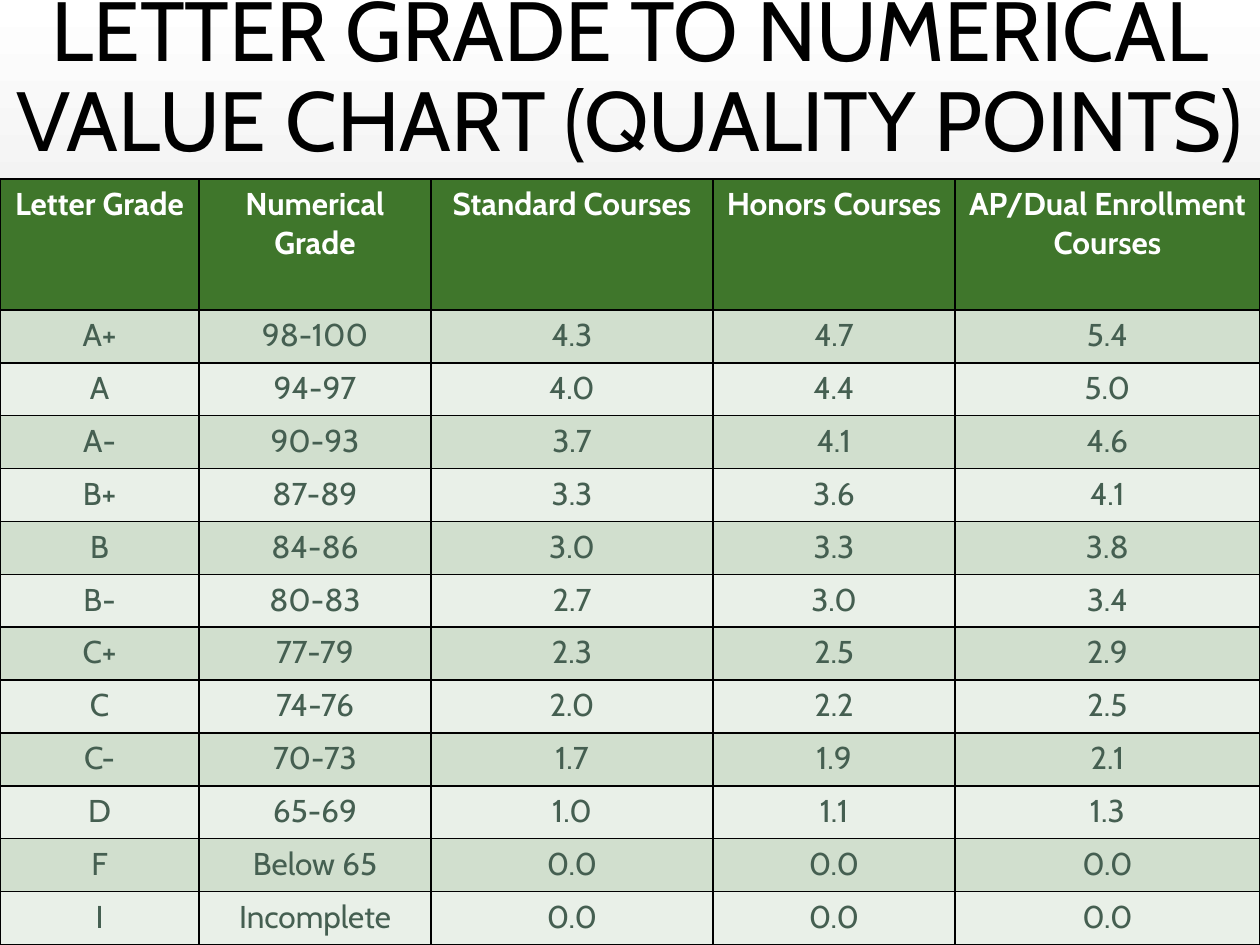
from lxml import etree
from pptx import Presentation
from pptx.dml.color import RGBColor as RGB
from pptx.enum.text import MSO_ANCHOR as ANCHOR, PP_ALIGN as ALIGN
from pptx.oxml.ns import qn
from pptx.util import Inches, Pt

COLORS = {
    "black": "000000",
    "white": "FFFFFF",
    "bg_end": "B9B9B9",
    "header": "3F762B",
    "band_dark": "D1DFCE",
    "band_light": "E9F0E8",
    "body": "455F51",
}
TITLE = "LETTER GRADE TO NUMERICAL VALUE CHART (QUALITY POINTS)"
HEADERS = ["Letter Grade", "Numerical Grade", "Standard Courses",
           "Honors Courses", "AP/Dual Enrollment Courses"]
GRADES = [
    ("A+", "98-100", "4.3", "4.7", "5.4"),
    ("A", "94-97", "4.0", "4.4", "5.0"),
    ("A-", "90-93", "3.7", "4.1", "4.6"),
    ("B+", "87-89", "3.3", "3.6", "4.1"),
    ("B", "84-86", "3.0", "3.3", "3.8"),
    ("B-", "80-83", "2.7", "3.0", "3.4"),
    ("C+", "77-79", "2.3", "2.5", "2.9"),
    ("C", "74-76", "2.0", "2.2", "2.5"),
    ("C-", "70-73", "1.7", "1.9", "2.1"),
    ("D", "65-69", "1.0", "1.1", "1.3"),
    ("F", "Below 65", "0.0", "0.0", "0.0"),
    ("I", "Incomplete", "0.0", "0.0", "0.0"),
]
COL_WIDTHS = [1.58, 1.84, 2.24, 1.92, 2.42]
HEADER_HEIGHT, ROW_HEIGHT = 1.04, 0.42


class SlideBuilder:
    font = "Cabin"
    border_width = Pt(1)

    def __init__(self, slide):
        self.slide = slide

    def background(self, *colors):
        """Fill the slide with a gradient running from top to bottom."""
        fill = self.slide.background.fill
        fill.gradient()
        fill.gradient_angle = 270
        for stop, color in zip(fill.gradient_stops, colors):
            stop.color.rgb = RGB.from_string(COLORS[color])

    def add_text(self, tf, text, color, **formats):
        p = tf.paragraphs[0]
        p.alignment = ALIGN.CENTER
        r = p.add_run()
        r.text = text
        r.font.color.rgb = RGB.from_string(COLORS[color])
        for name, value in {"name": self.font, **formats}.items():
            setattr(r.font, name, value)
        return p

    def title(self, text, left, top, width, height):
        box = self.slide.shapes.add_textbox(*map(Inches, (left, top, width, height)))
        tf = box.text_frame
        tf.word_wrap = True
        tf.vertical_anchor = ANCHOR.MIDDLE
        self.add_text(tf, text, "black", size=Pt(48)).line_spacing = 0.9

    def borders(self, cell):
        tc_pr = cell._tc.get_or_add_tcPr()
        for i, side in enumerate(("lnL", "lnR", "lnT", "lnB")):
            ln = etree.Element(qn(f"a:{side}"), w=str(self.border_width))
            fill = etree.SubElement(ln, qn("a:solidFill"))
            etree.SubElement(fill, qn("a:srgbClr"), val=COLORS["black"])
            tc_pr.insert(i, ln)

    def cell(self, cell, text, fill, color, bold):
        cell.fill.solid()
        cell.fill.fore_color.rgb = RGB.from_string(COLORS[fill])
        self.add_text(cell.text_frame, text, color, size=Pt(18), bold=bold)
        self.borders(cell)

    def table(self, rows, left, top, widths, heights):
        frame = self.slide.shapes.add_table(
            len(rows), len(widths), Inches(left), Inches(top),
            Inches(sum(widths)), Inches(sum(heights)))
        table = frame.table
        for col, width in zip(table.columns, widths):
            col.width = Inches(width)
        for i, (row, height) in enumerate(zip(rows, heights)):
            table.rows[i].height = Inches(height)
            band = "band_dark" if i % 2 else "band_light"
            fill, color = (band, "body") if i else ("header", "white")
            for j, text in enumerate(row):
                self.cell(table.cell(i, j), text, fill, color, bold=i == 0)


def main():
    prs = Presentation()
    prs.slide_width, prs.slide_height = Inches(10), Inches(7.5)
    s = SlideBuilder(prs.slides.add_slide(prs.slide_layouts[6]))
    s.background("white", "bg_end")
    s.title(TITLE, 0, -0.08, 10, 1.42)
    heights = [HEADER_HEIGHT] + [ROW_HEIGHT] * len(GRADES)
    s.table([HEADERS, *GRADES], 0, 1.42, COL_WIDTHS, heights)
    prs.save("out.pptx")


if __name__ == "__main__":
    main()
